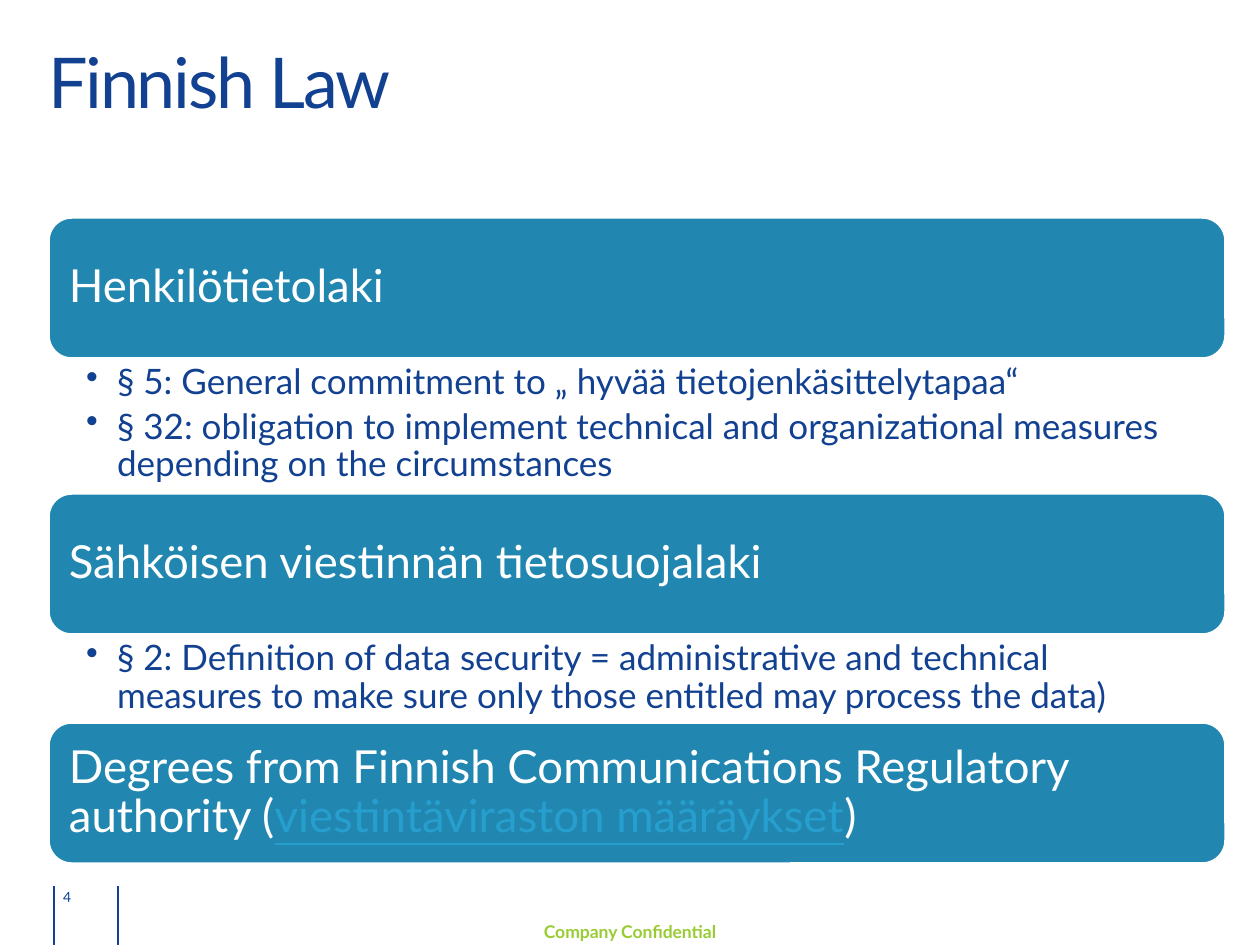
from dataclasses import dataclass

import lxml.etree
import pptx
import pptx.dml.color
import pptx.enum.shapes
import pptx.enum.text
import pptx.oxml.ns
import pptx.util

EMU_PER_PX = 914400 / 126
SLIDE_WIDTH, SLIDE_HEIGHT = 1260, 945
STACK_LEFT, STACK_TOP, STACK_WIDTH = 48, 217, 1178
BANNER_HEIGHT = 142


@dataclass(frozen=True)
class Theme:
    font: str = "Lato"
    navy: str = "124191"
    teal: str = "2187B0"
    link: str = "279FCE"
    green: str = "99CC33"
    white: str = "FFFFFF"
    title_size: int = 40
    banner_size: int = 26
    bullet_size: int = 20
    footer_size: int = 10
    number_size: int = 8


THEME = Theme()

# Each section: banner runs as (text, is_link), bullets, height of the bullet area.
SECTIONS = [
    ([("Henkilötietolaki", False)],
     ["§ 5: General commitment to „ hyvää tietojenkäsittelytapaa“",
      "§ 32: obligation to implement technical and organizational measures "
      "depending on the circumstances"], 134),
    ([("Sähköisen viestinnän tietosuojalaki", False)],
     ["§ 2: Definition of data security = administrative and technical "
      "measures to make sure only those entitled may process the data)"], 87),
    ([("Degrees from Finnish Communications Regulatory authority (", False),
      ("viestintäviraston määräykset", True), (")", False)], [], 0),
]


def px(length):
    return pptx.util.Emu(round(length * EMU_PER_PX))


def rgb(color):
    return pptx.dml.color.RGBColor.from_string(color)


def style(paragraph, size, color, bold=False):
    paragraph.font.name = THEME.font
    paragraph.font.size = pptx.util.Pt(size)
    paragraph.font.color.rgb = rgb(color)
    paragraph.font.bold = bold


def set_frame(frame, insets, anchor=pptx.enum.text.MSO_ANCHOR.TOP):
    """Wrap the text and set its left, top, right and bottom insets in px."""
    frame.word_wrap = True
    frame.vertical_anchor = anchor
    (frame.margin_left, frame.margin_top,
     frame.margin_right, frame.margin_bottom) = map(px, insets)


def add_label(slide, box, text, size, color, insets=(0, 0, 0, 0), bold=False,
              anchor=pptx.enum.text.MSO_ANCHOR.TOP,
              align=pptx.enum.text.PP_ALIGN.LEFT):
    frame = slide.shapes.add_textbox(*map(px, box)).text_frame
    set_frame(frame, insets, anchor)
    paragraph = frame.paragraphs[0]
    paragraph.text = text
    paragraph.alignment = align
    style(paragraph, size, color, bold)
    return paragraph


def add_rule(slide, x, top):
    """Draw a vertical line from the slide's bottom edge up to top."""
    line = slide.shapes.add_connector(
        pptx.enum.shapes.MSO_CONNECTOR.STRAIGHT,
        px(x), px(SLIDE_HEIGHT), px(x), px(top))
    line.line.color.rgb = rgb(THEME.navy)
    line.line.width = pptx.util.Pt(0.75)
    lxml.etree.SubElement(line._element.spPr, pptx.oxml.ns.qn("a:effectLst"))


def add_banner(slide, top, runs):
    shape = slide.shapes.add_shape(
        pptx.enum.shapes.MSO_SHAPE.ROUNDED_RECTANGLE,
        *map(px, (STACK_LEFT, top, STACK_WIDTH, BANNER_HEIGHT)))
    shape.shadow.inherit = False
    shape.fill.solid()
    shape.fill.fore_color.rgb = rgb(THEME.teal)
    shape.line.color.rgb = rgb(THEME.white)
    shape.line.width = pptx.util.Pt(2)
    set_frame(shape.text_frame, (14, 14, 14, 14), pptx.enum.text.MSO_ANCHOR.MIDDLE)
    paragraph = shape.text_frame.paragraphs[0]
    paragraph.alignment = pptx.enum.text.PP_ALIGN.LEFT
    paragraph.line_spacing = 0.9
    style(paragraph, THEME.banner_size, THEME.white)
    for text, is_link in runs:
        run = paragraph.add_run()
        run.text = text
        if is_link:
            run.font.color.rgb = rgb(THEME.link)
            run.font.underline = True


def add_bullet_mark(paragraph, indent):
    properties = paragraph._p.get_or_add_pPr()
    properties.set("marL", str(px(indent)))
    properties.set("indent", str(-px(indent)))
    mark = lxml.etree.SubElement(properties, pptx.oxml.ns.qn("a:buChar"))
    mark.set("char", "•")


def add_bullets(slide, top, height, bullets):
    box = slide.shapes.add_textbox(*map(px, (STACK_LEFT, top, STACK_WIDTH, height)))
    frame = box.text_frame
    set_frame(frame, (38, 5, 25, 5))
    for index, text in enumerate(bullets):
        paragraph = frame.add_paragraph() if index else frame.paragraphs[0]
        paragraph.text = text
        paragraph.level = 1
        paragraph.line_spacing = 0.9
        paragraph.space_after = pptx.util.Pt(4)
        add_bullet_mark(paragraph, 31)
        style(paragraph, THEME.bullet_size, THEME.navy)


def add_sections(slide):
    top = STACK_TOP
    for runs, bullets, bullet_height in SECTIONS:
        add_banner(slide, top, runs)
        top += BANNER_HEIGHT
        if bullets:
            add_bullets(slide, top, bullet_height, bullets)
        top += bullet_height


def main():
    presentation = pptx.Presentation()
    presentation.slide_width = px(SLIDE_WIDTH)
    presentation.slide_height = px(SLIDE_HEIGHT)
    slide = presentation.slides.add_slide(presentation.slide_layouts[6])

    add_label(slide, (0, 915, SLIDE_WIDTH, 34), "Company Confidential",
              THEME.footer_size, THEME.green, insets=(13, 6, 13, 6), bold=True,
              align=pptx.enum.text.PP_ALIGN.CENTER)
    for x in (54, 118):
        add_rule(slide, x, 886)
    title = add_label(slide, (48, 39, 1155, 84), "Finnish Law",
                      THEME.title_size, THEME.navy)
    title.runs[0].font._element.set("spc", "-120")
    add_label(slide, (63, 888, 42, 17), "4", THEME.number_size, THEME.navy,
              anchor=pptx.enum.text.MSO_ANCHOR.MIDDLE)
    add_sections(slide)

    presentation.save("out.pptx")


if __name__ == "__main__":
    main()
